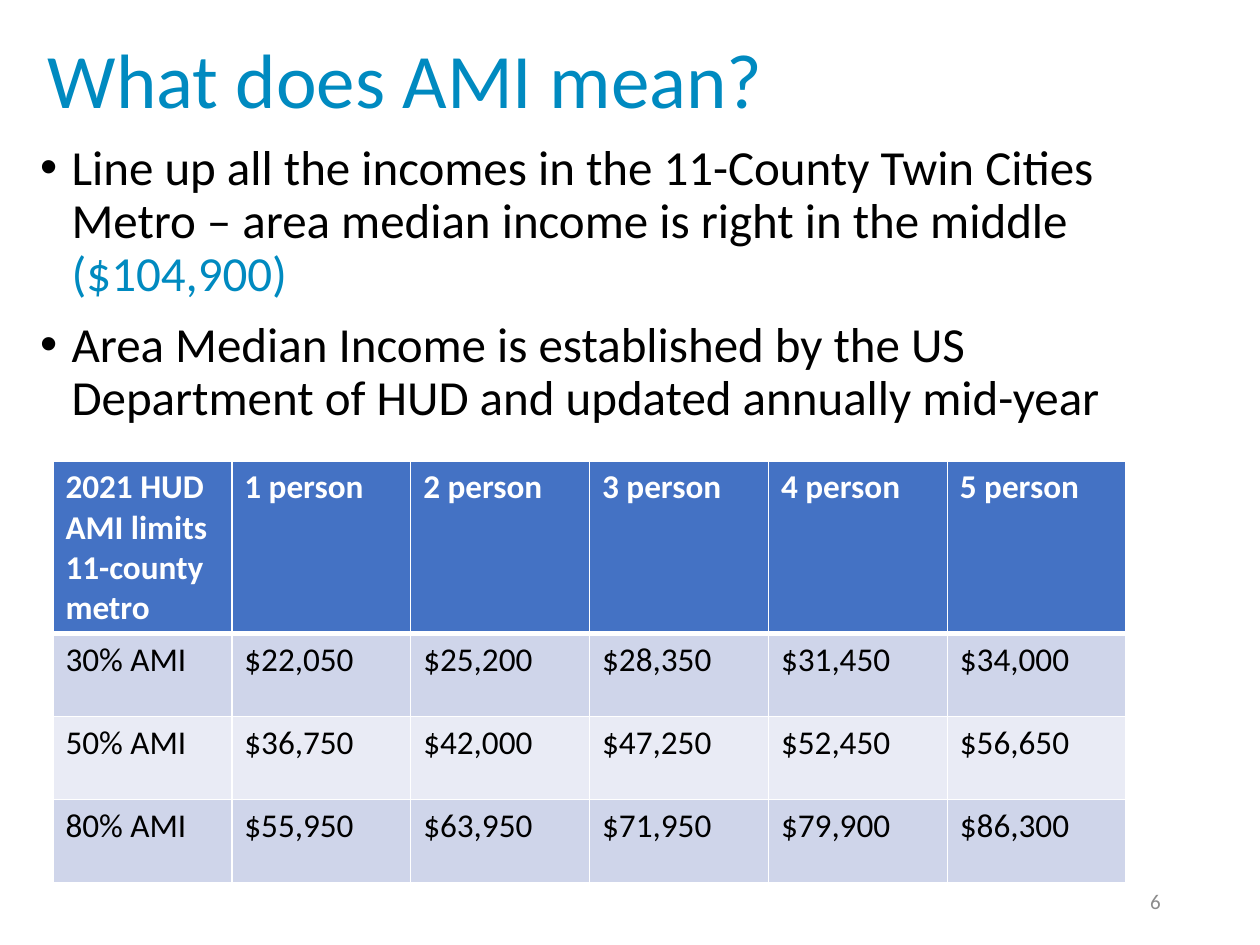
from lxml import etree
from pptx import Presentation
from pptx.dml.color import RGBColor
from pptx.enum.text import MSO_ANCHOR, PP_ALIGN
from pptx.oxml.ns import qn
from pptx.util import Inches, Pt

TOP, MIDDLE = MSO_ANCHOR.TOP, MSO_ANCHOR.MIDDLE
LEFT, RIGHT = PP_ALIGN.LEFT, PP_ALIGN.RIGHT

COLORS = {
    "accent": "008AC0",
    "text": "000000",
    "muted": "8C8C8C",
    "white": "FFFFFF",
    "header": "4472C4",
    "band_dark": "CFD5EA",
    "band_light": "E9EBF5",
}

BULLETS = [
    [("Line up all the incomes in the 11-County Twin Cities Metro – "
      "area median income is right in the middle", "text"),
     (" ($104,900)", "accent")],
    [("Area Median Income is established by the US Department of HUD "
      "and updated annually mid-year", "text")],
]

LIMITS = [
    ["2021 HUD AMI limits\n11-county metro"] + [f"{size} person" for size in range(1, 6)],
    ["30% AMI", "$22,050", "$25,200", "$28,350", "$31,450", "$34,000"],
    ["50% AMI", "$36,750", "$42,000", "$47,250", "$52,450", "$56,650"],
    ["80% AMI", "$55,950", "$63,950", "$71,950", "$79,900", "$86,300"],
]


def add_span(para, text, *, size, color, bold=False, font="Calibri"):
    span = para.add_run()
    span.text = text
    span.font.name = font
    span.font.size = Pt(size)
    span.font.bold = bold
    span.font.color.rgb = RGBColor.from_string(COLORS[color])


def add_bullet(para, indent):
    """Give the paragraph a round bullet with a hanging indent."""
    properties = para._p.get_or_add_pPr()
    properties.set("marL", str(indent))
    properties.set("indent", str(-indent))
    etree.SubElement(properties, qn("a:buFont")).set("typeface", "Arial")
    etree.SubElement(properties, qn("a:buChar")).set("char", "•")


def set_borders(cell, **widths):
    """Draw white cell borders; the widths L, R, T and B are in points."""
    properties = cell._tc.get_or_add_tcPr()
    for side in "LRTB":
        line = etree.SubElement(properties, qn(f"a:ln{side}"), w=str(Pt(widths.get(side, 1))))
        fill = etree.SubElement(line, qn("a:solidFill"))
        etree.SubElement(fill, qn("a:srgbClr"), val=COLORS["white"])


class SlideBuilder:
    def __init__(self, page):
        self.page = page

    def text(self, left, top, width, height, paragraphs, *, size, anchor=TOP,
             align=LEFT, line_spacing=None, space_before=0, bulleted=False):
        """Add a text box; each paragraph is a list of (text, color name)."""
        box = self.page.shapes.add_textbox(
            Inches(left), Inches(top), Inches(width), Inches(height))
        frame = box.text_frame
        frame.word_wrap = True
        frame.vertical_anchor = anchor
        for index, spans in enumerate(paragraphs):
            para = frame.add_paragraph() if index else frame.paragraphs[0]
            para.alignment = align
            para.line_spacing = line_spacing
            para.space_before = Pt(space_before)
            if bulleted:
                add_bullet(para, Inches(0.25))
            for words, color in spans:
                add_span(para, words, size=size, color=color)

    def table(self, left, top, column_width, row_heights, rows, *, size):
        width, height = column_width * len(rows[0]), sum(row_heights)
        table = self.page.shapes.add_table(
            len(rows), len(rows[0]),
            Inches(left), Inches(top), Inches(width), Inches(height)).table
        for column in table.columns:
            column.width = Inches(column_width)
        for row, row_height in zip(table.rows, row_heights):
            row.height = Inches(row_height)
        for row_index, values in enumerate(rows):
            for column_index, value in enumerate(values):
                self.cell(table.cell(row_index, column_index), value, row_index, size)

    def cell(self, cell, value, row_index, size):
        is_header = row_index == 0
        band = "band_dark" if row_index % 2 else "band_light"
        set_borders(cell, B=3 if is_header else 1, T=3 if row_index == 1 else 1)
        cell.fill.solid()
        cell.fill.fore_color.rgb = RGBColor.from_string(
            COLORS["header" if is_header else band])
        for index, line in enumerate(value.split("\n")):
            frame = cell.text_frame
            para = frame.add_paragraph() if index else frame.paragraphs[0]
            add_span(para, line, size=size, bold=is_header,
                     color="white" if is_header else "text")


def main():
    deck = Presentation()
    deck.slide_width, deck.slide_height = Inches(10), Inches(7.5)
    builder = SlideBuilder(deck.slides.add_slide(deck.slide_layouts[6]))

    builder.text(0.28, -0.06, 11.5, 1.45, [[("What does AMI mean?", "accent")]],
                 size=44, anchor=MIDDLE, line_spacing=0.9)
    builder.text(0.22, 1.09, 9.49, 5.14, BULLETS, size=28,
                 line_spacing=0.9, space_before=10, bulleted=True)
    builder.text(7.06, 6.95, 2.25, 0.4, [[("6", "muted")]],
                 size=12, anchor=MIDDLE, align=RIGHT)
    builder.table(0.42, 3.66, 1.42, [1.34] + [0.66] * 3, LIMITS, size=19)

    deck.save("out.pptx")


if __name__ == "__main__":
    main()
